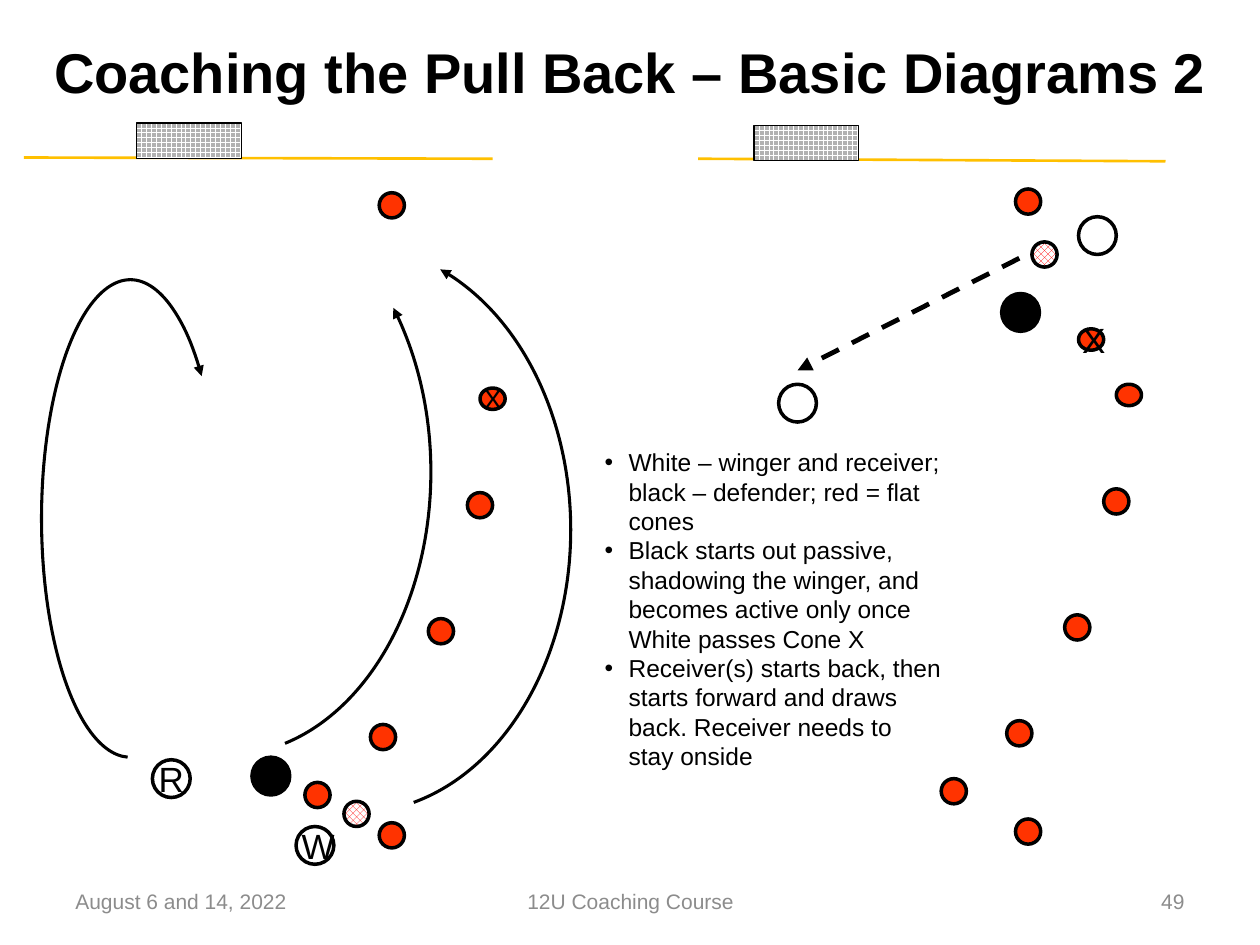
from lxml import etree
from pptx import Presentation
from pptx.dml.color import RGBColor
from pptx.enum.dml import MSO_LINE, MSO_PATTERN
from pptx.enum.shapes import MSO_CONNECTOR, MSO_SHAPE
from pptx.enum.text import MSO_ANCHOR, MSO_AUTO_SIZE, PP_ALIGN
from pptx.oxml.ns import qn
from pptx.util import Inches, Pt

COLORS = {"black": "000000", "white": "FFFFFF", "cone": "FF3300", "ball": "FF0000",
          "goal_line": "FFC000", "net": "B2B2B2", "footer": "8C8C8C"}
CONES = [(2.75, 4.25), (2.23, 4.71), (2.82, 0.03), (3.52, 2.41), (3.21, 3.41), (2.82, 5.03)]
NOTES = ["White – winger and receiver; black – defender; red = flat cones",
         "Black starts out passive, shadowing the winger, and becomes active only once "
         "White passes Cone X",
         "Receiver(s) starts back, then starts forward and draws back. Receiver needs to "
         "stay onside"]


def rgb(name):
    """Return the named palette colour."""
    return RGBColor.from_string(COLORS[name])


def style_font(font, size, color="black", bold=False):
    """Apply the slide's typeface with the given format values."""
    for key, value in {"name": "Arial", "size": Pt(size), "bold": bold}.items():
        setattr(font, key, value)
    font.color.rgb = rgb(color)


def set_frame(tf, inset=None, anchor=MSO_ANCHOR.MIDDLE):
    """Set wrapping, anchor and, when given, equal insets."""
    values = {"word_wrap": True, "vertical_anchor": anchor}
    if inset is not None:
        sides = ("left", "top", "right", "bottom")
        values.update({f"margin_{side}": Inches(inset) for side in sides})
    for key, value in values.items():
        setattr(tf, key, value)


def write(tf, text, align, size, color="black", bold=False):
    """Write one paragraph into a text frame."""
    p = tf.paragraphs[0]
    p.alignment = align
    r = p.add_run()
    r.text = text
    style_font(r.font, size, color, bold)


def add_text(s, box, text, align, size, color="black", bold=False, inset=None):
    """Add a one-paragraph text box."""
    tf = s.shapes.add_textbox(*map(Inches, box)).text_frame
    set_frame(tf, inset)
    write(tf, text, align, size, color, bold)


def add_shape(s, kind, box, width, fill=None, pattern=None):
    """Add an outlined shape with no, solid or patterned fill."""
    sp = s.shapes.add_shape(kind, *map(Inches, box))
    sp.shadow.inherit = False
    sp.line.color.rgb = rgb("black")
    sp.line.width = Pt(width)
    if pattern:
        sp.fill.patterned()
        sp.fill.pattern, fore, back = pattern
        sp.fill.fore_color.rgb, sp.fill.back_color.rgb = rgb(fore), rgb(back)
    elif fill:
        sp.fill.solid()
        sp.fill.fore_color.rgb = rgb(fill)
    else:
        sp.fill.background()
    return sp


def add_marker(s, x, y, w=0.2, h=0.2, fill=None, pattern=None, label=None, size=20):
    """Add a round marker with an optional letter."""
    sp = add_shape(s, MSO_SHAPE.FLOWCHART_CONNECTOR, (x, y, w, h), 2, fill, pattern)
    if label:
        set_frame(sp.text_frame, 0)
        write(sp.text_frame, label, PP_ALIGN.CENTER, size)


def add_player(s, x, y, fill=None, label=None):
    """Add a large player marker."""
    add_marker(s, x, y, 0.3, 0.3, fill, label=label)


def add_flat_cone(s, x, y, label=None, size=20):
    """Add a flattened cone marker."""
    add_marker(s, x, y, 0.2, 0.17, "cone", label=label, size=size)


def add_ball(s, x, y):
    """Add the checked ball marker."""
    add_marker(s, x, y, pattern=(MSO_PATTERN.LARGE_CHECKER_BOARD, "ball", "white"))


def add_arrowhead(sp):
    """Put a triangle at the end of a shape's line."""
    etree.SubElement(sp._element.spPr.find(qn("a:ln")), qn("a:tailEnd"), type="triangle")


def add_run_path(s, box, angles, flip=False):
    """Add a curved running path with an arrowhead."""
    sp = add_shape(s, MSO_SHAPE.ARC, box, 1.75)
    for i, angle in enumerate(angles):
        sp.adjustments[i] = angle
    if flip:
        sp._element.spPr.find(qn("a:xfrm")).set("flipH", "1")
    add_arrowhead(sp)


def add_line(s, start, end, color, width):
    """Add a straight line without shadow."""
    c = s.shapes.add_connector(MSO_CONNECTOR.STRAIGHT, *map(Inches, start + end))
    c.line.color.rgb = rgb(color)
    c.line.width = Pt(width)
    etree.SubElement(c._element.spPr, qn("a:effectLst"))
    return c


def add_goal(s, box, net_x, net_y):
    """Add a goal line across the box with a net standing on it."""
    x, y, w, h = box
    add_line(s, (x, y), (x + w, y + h), "goal_line", 1.5)
    net = add_shape(s, MSO_SHAPE.RECTANGLE, (x + net_x, y + net_y, 0.28, 0.83), 0.75,
                    pattern=(MSO_PATTERN.LARGE_GRID, "white", "net"))
    net.rotation = 270


def add_cones(s, x, y, label=None):
    """Add the curved row of cones shared by both diagrams."""
    for dx, dy in CONES:
        add_marker(s, x + dx, y + dy, fill="cone")
    add_flat_cone(s, x + 3.62, y + 1.58, label, 16)


def add_start_diagram(s, x, y):
    """Add the starting positions and the three runs."""
    add_cones(s, x, y, "X")
    add_ball(s, x + 2.54, y + 4.86)
    add_player(s, x + 2.16, y + 5.06, label="W")
    add_player(s, x + 1.81, y + 4.51, "black")
    add_player(s, x + 1.02, y + 4.53, label="R")
    add_run_path(s, (x + 0.94, y + 0.46, 3.4, 4.49), (61.11, 151.31), True)
    add_run_path(s, (x + 0.01, y, 3.22, 4.49), (61.11, 134.87), True)
    add_run_path(s, (x + 0.14, y + 0.72, 1.41, 3.79), (54.39, 177.97))


def add_pass_diagram(s, x, y):
    """Add the final positions and the pull-back pass."""
    add_cones(s, x, y)
    add_ball(s, x + 2.95, y + 0.45)
    for dx, dy, fill in [(3.32, 0.25, None), (0.94, 1.58, None), (2.71, 0.86, "black")]:
        add_player(s, x + dx, y + dy, fill)
    add_flat_cone(s, x + 3.32, y + 1.14, "X")
    pull_back = add_line(s, (x + 2.85, y + 0.58), (x + 1.09, y + 1.47), "black", 2.75)
    pull_back.line.dash_style = MSO_LINE.DASH
    add_arrowhead(pull_back)


def add_notes(s, box):
    """Add the bulleted explanation."""
    tf = s.shapes.add_textbox(*map(Inches, box)).text_frame
    set_frame(tf, anchor=MSO_ANCHOR.TOP)
    tf.auto_size = MSO_AUTO_SIZE.SHAPE_TO_FIT_TEXT
    for i, note in enumerate(NOTES):
        p = tf.add_paragraph() if i else tf.paragraphs[0]
        pPr = p._p.get_or_add_pPr()
        pPr.set("marL", str(Inches(0.19)))
        pPr.set("indent", str(Inches(-0.19)))
        etree.SubElement(pPr, qn("a:buFont"), typeface="Arial")
        etree.SubElement(pPr, qn("a:buChar"), char="•")
        r = p.add_run()
        r.text = note
        style_font(r.font, 14)


def add_footer(s, y, h):
    """Add the date, course name and slide number."""
    for x, w, text, align in [(0.5, 2.33, "August 6 and 14, 2022", PP_ALIGN.LEFT),
                              (3.42, 3.17, "12U Coaching Course", PP_ALIGN.CENTER),
                              (7.17, 2.33, "49", PP_ALIGN.RIGHT)]:
        add_text(s, (x, y, w, h), text, align, 12, "footer")


def main():
    """Build and save the slide."""
    prs = Presentation()
    prs.slide_width, prs.slide_height = Inches(10), Inches(7.5)
    s = prs.slides.add_slide(prs.slide_layouts[6])
    add_text(s, (0.42, 0.3, 9.17, 0.53), "Coaching the Pull Back – Basic Diagrams 2",
             PP_ALIGN.CENTER, 32, bold=True, inset=0)
    add_goal(s, (0.19, 1.25, 3.72, 0.01), 1.17, -0.55)
    add_goal(s, (5.54, 1.26, 3.71, 0.02), 0.72, -0.54)
    add_start_diagram(s, 0.19, 1.5)
    add_pass_diagram(s, 5.24, 1.47)
    add_notes(s, (4.7, 3.5, 2.88, 3))
    add_footer(s, 6.95, 0.4)
    prs.save("out.pptx")


if __name__ == "__main__":
    main()
